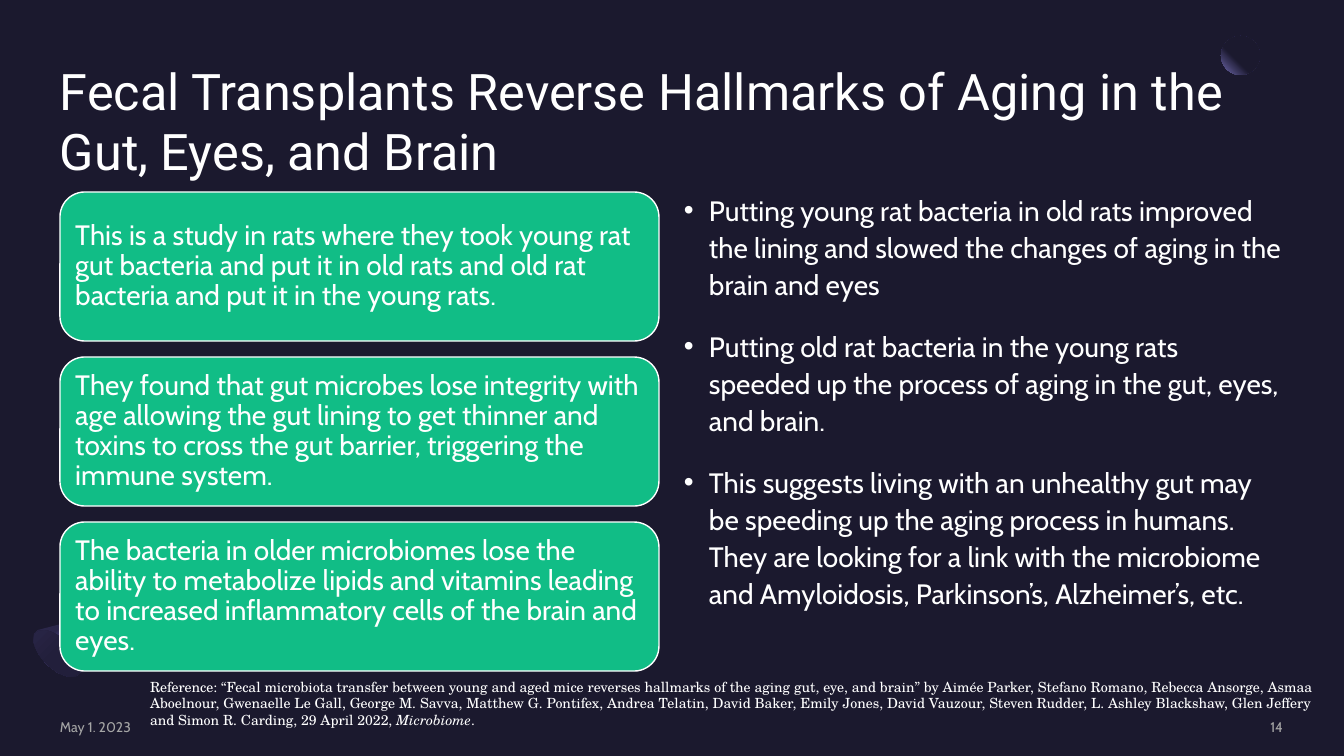
from lxml import etree
from pptx import Presentation
from pptx.dml.color import RGBColor
from pptx.enum.shapes import MSO_SHAPE
from pptx.enum.text import MSO_ANCHOR, PP_ALIGN
from pptx.oxml.ns import qn
from pptx.util import Pt

ELLIPSE, ROUNDED = MSO_SHAPE.OVAL, MSO_SHAPE.ROUNDED_RECTANGLE
TOP, MIDDLE = MSO_ANCHOR.TOP, MSO_ANCHOR.MIDDLE
LEFT, RIGHT = PP_ALIGN.LEFT, PP_ALIGN.RIGHT

COLORS = {
    "background": "1B192E", "white": "FFFFFF", "card": "11BD86", "footer": "A5A5A5",
    "glow": "746EB3", "violet": "453E75", "indigo": "2B274A", "shade": "221F3B",
}
TITLE = "Fecal Transplants Reverse Hallmarks of Aging in the Gut, Eyes, and Brain"
FINDINGS = [
    "This is a study in rats where they took young rat gut bacteria and put it in old rats "
    "and old rat bacteria and put it in the young rats.",
    "They found that gut microbes lose integrity with age allowing the gut lining to get "
    "thinner and toxins to cross the gut barrier, triggering the immune system.",
    "The bacteria in older microbiomes lose the ability to metabolize lipids and vitamins "
    "leading to increased inflammatory cells of the brain and eyes.",
]
CONCLUSIONS = [
    "Putting young rat bacteria in old rats improved the lining and slowed the changes of "
    "aging in the brain and eyes",
    "Putting old rat bacteria in the young rats speeded up the process of aging in the gut, "
    "eyes, and brain.",
    "This suggests living with an unhealthy gut may be speeding up the aging process in "
    "humans. They are looking for a link with the microbiome and Amyloidosis, Parkinson’s, "
    "Alzheimer’s, etc.",
]
REFERENCE = [
    ("Reference: “Fecal microbiota transfer between young and aged mice reverses hallmarks "
     "of the aging gut, eye, and brain” by Aimée Parker, Stefano Romano, Rebecca Ansorge, "
     "Asmaa Aboelnour, Gwenaelle Le Gall, George M. Savva, Matthew G. Pontifex, Andrea "
     "Telatin, David Baker, Emily Jones, David Vauzour, Steven Rudder, L. Ashley Blackshaw, "
     "Glen Jeffery and Simon R. Carding, 29 April 2022, ", False),
    ("Microbiome", True),
    (".", False),
]
DATE, PAGE = "May 1. 2023", "14"

SLIDE_SIZE = (1344, 756)
MARGIN = 60
CARD_TOP, CARD_WIDTH, CARD_HEIGHT, CARD_GAP = 192, 599, 149, 16
CARD_INSET = 8
COLUMN_LEFT, COLUMN_WIDTH, BULLET_INDENT = 684, 599, 25
FOOTER_TOP, FOOTER_HEIGHT = 718, 17
CYLINDER_SIDE = [(96, 615), (81, 671), (79, 674), (75, 677), (69, 677), (58, 673),
                 (46, 664), (38, 653), (33, 642), (34, 634), (38, 630)]
SIDE_STOPS = [(0, "indigo"), (30, "indigo"), (40, "violet"), (60, "indigo"), (100, "background")]
CAP_STOPS = [(0, "shade"), (50, "shade"), (100, "indigo")]
MOON_STOPS = [(0, "background"), (60, "background"), (100, "glow")]

EMU_PER_PX = 12192000 / SLIDE_SIZE[0]


def px(length):
    return round(length * EMU_PER_PX)


def rgb(name):
    return RGBColor.from_string(COLORS[name])


def fill_gradient(shape, stops, angle=None):
    """Fill with a linear gradient, or one spreading from the top right if no angle is given."""
    shape.shadow.inherit = False
    shape.line.fill.background()
    shape.fill.gradient()
    gradient = shape._element.spPr.find(qn("a:gradFill"))
    for child in list(gradient):
        gradient.remove(child)
    stop_list = etree.SubElement(gradient, qn("a:gsLst"))
    for position, color in stops:
        stop = etree.SubElement(stop_list, qn("a:gs"), pos=str(position * 1000))
        etree.SubElement(stop, qn("a:srgbClr"), val=COLORS[color])
    if angle is None:
        radial = etree.SubElement(gradient, qn("a:path"), {"path": "circle"})
        etree.SubElement(radial, qn("a:fillToRect"), l="100000", b="100000")
    else:
        etree.SubElement(gradient, qn("a:lin"), ang=str(angle * 60000), scaled="0")


def add_bullet(paragraph):
    properties = paragraph._p.get_or_add_pPr()
    properties.set("marL", str(px(BULLET_INDENT)))
    properties.set("indent", str(-px(BULLET_INDENT)))
    color = etree.SubElement(properties, qn("a:buClr"))
    etree.SubElement(color, qn("a:srgbClr"), val=COLORS["white"])
    etree.SubElement(properties, qn("a:buFont"), typeface="Arial")
    etree.SubElement(properties, qn("a:buChar"), char="•")


def write_text(shape, paragraphs, size, font="Cabin", color="white", anchor=TOP, align=LEFT,
               inset=0, line_spacing=None, space_before=0, bullets=False):
    """Write paragraphs, each a string or a list of (text, italic) runs."""
    frame = shape.text_frame
    frame.word_wrap = True
    frame.vertical_anchor = anchor
    frame.margin_left = frame.margin_right = px(inset)
    frame.margin_top = frame.margin_bottom = px(inset)
    for index, content in enumerate(paragraphs):
        paragraph = frame.add_paragraph() if index else frame.paragraphs[0]
        paragraph.alignment = align
        if line_spacing:
            paragraph.line_spacing = line_spacing
        if index:
            paragraph.space_before = Pt(space_before)
        if bullets:
            add_bullet(paragraph)
        for text, italic in [(content, False)] if isinstance(content, str) else content:
            run = paragraph.add_run()
            run.text = text
            run.font.name = font
            run.font.size = Pt(size)
            run.font.italic = italic
            run.font.color.rgb = rgb(color)


def add_text(slide, box, paragraphs, size, **text_format):
    write_text(slide.shapes.add_textbox(*map(px, box)), paragraphs, size, **text_format)


def add_decorations(slide):
    moon = slide.shapes.add_shape(ELLIPSE, *map(px, (1221, 36, 39, 39)))
    fill_gradient(moon, MOON_STOPS)
    builder = slide.shapes.build_freeform(*CYLINDER_SIDE[0], scale=EMU_PER_PX)
    builder.add_line_segments(CYLINDER_SIDE[1:])
    fill_gradient(builder.convert_to_shape(), SIDE_STOPS, angle=55)
    cap = slide.shapes.add_shape(ELLIPSE, *map(px, (42, 624, 30, 59)))
    cap.rotation = 135
    fill_gradient(cap, CAP_STOPS, angle=90)


def add_card(slide, index, text):
    top = CARD_TOP + index * (CARD_HEIGHT + CARD_GAP)
    card = slide.shapes.add_shape(ROUNDED, *map(px, (MARGIN, top, CARD_WIDTH, CARD_HEIGHT)))
    card.shadow.inherit = False
    card.fill.solid()
    card.fill.fore_color.rgb = rgb("card")
    card.line.color.rgb = rgb("white")
    card.line.width = Pt(1)
    write_text(card, [text], 20, anchor=MIDDLE, inset=CARD_INSET, line_spacing=0.9)


def main():
    presentation = Presentation()
    presentation.slide_width, presentation.slide_height = map(px, SLIDE_SIZE)
    slide = presentation.slides.add_slide(presentation.slide_layouts[6])
    slide.background.fill.solid()
    slide.background.fill.fore_color.rgb = rgb("background")

    add_decorations(slide)
    add_text(slide, (MARGIN, 60, 1223, 147), [TITLE], 36, font="Roboto")
    for index, finding in enumerate(FINDINGS):
        add_card(slide, index, finding)
    add_text(slide, (COLUMN_LEFT, 190, COLUMN_WIDTH, 483), CONCLUSIONS, 20,
             line_spacing=1.1, space_before=18, bullets=True)

    footer = {"color": "footer", "anchor": MIDDLE}
    add_text(slide, (MARGIN, FOOTER_TOP, 290, FOOTER_HEIGHT), [DATE], 10, **footer)
    add_text(slide, (150, 678, 1172, 51), [REFERENCE], 10, font="TeX Gyre Schola")
    add_text(slide, (1097, FOOTER_TOP, 186, FOOTER_HEIGHT), [PAGE], 10, align=RIGHT, **footer)
    presentation.save("out.pptx")


if __name__ == "__main__":
    main()
